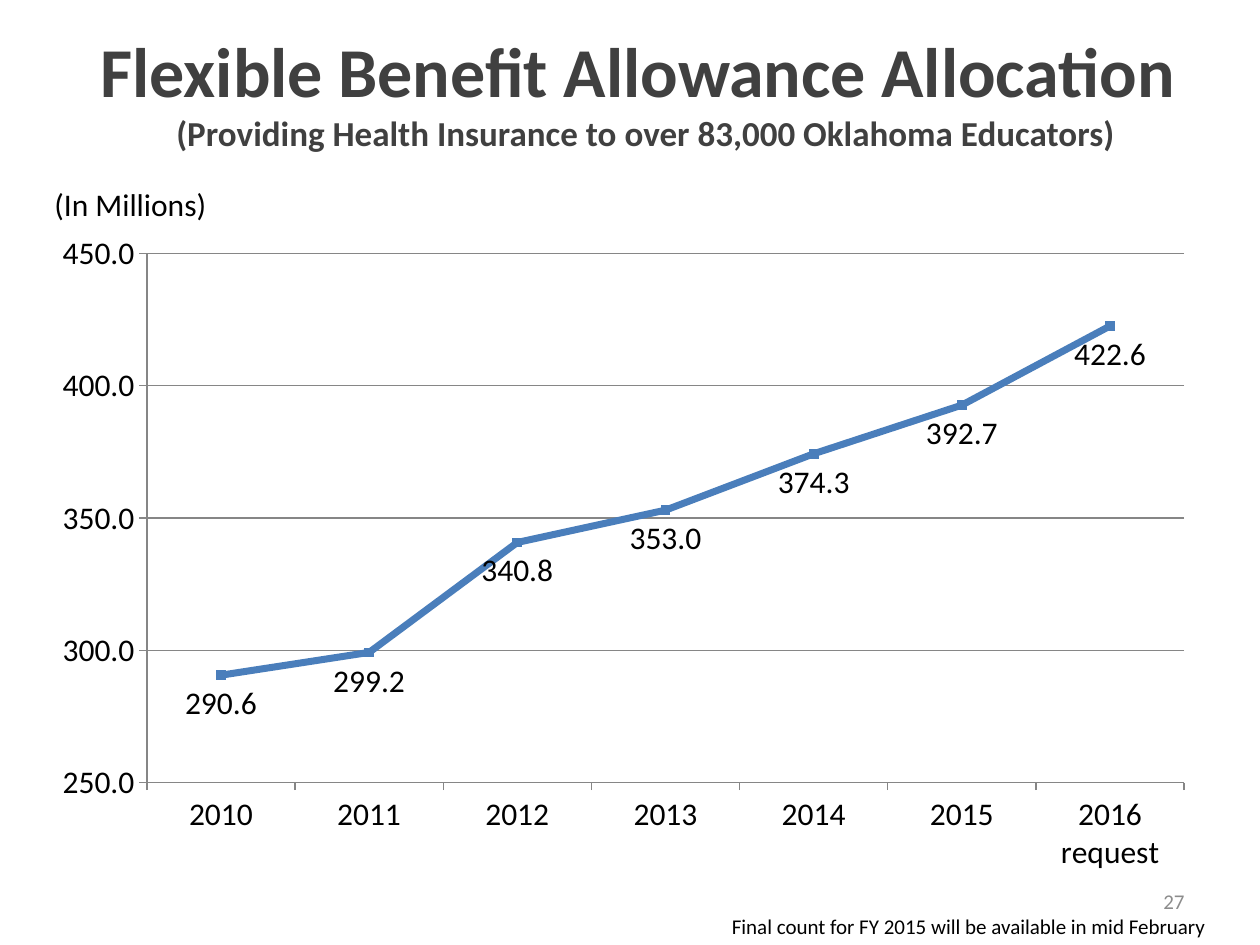
from dataclasses import dataclass

from lxml.etree import SubElement
from pptx import Presentation
from pptx.chart.data import CategoryChartData
from pptx.dml.color import RGBColor
from pptx.enum.chart import XL_CHART_TYPE, XL_LABEL_POSITION, XL_MARKER_STYLE, XL_TICK_MARK
from pptx.enum.text import MSO_ANCHOR, MSO_AUTO_SIZE, PP_ALIGN
from pptx.oxml.ns import qn
from pptx.util import Inches, Pt


@dataclass(frozen=True)
class Theme:
    """Colours, font and type sizes of the slide."""
    font: str = "Calibri"
    ink: str = "000000"
    heading: str = "404040"
    muted: str = "8C8C8C"
    axis: str = "868686"
    trend: str = "4A7EBB"
    marker: str = "4F81BD"
    title_size: int = 40
    subtitle_size: int = 20
    label_size: int = 18
    note_size: int = 12


def write(paragraph, text, *, theme, size, color, bold=False, align=PP_ALIGN.LEFT):
    """Put formatted text into a paragraph."""
    paragraph.alignment = align
    paragraph.space_before = Pt(0)
    run = paragraph.add_run()
    run.text = text
    run.font.name = theme.font
    run.font.size = Pt(size)
    run.font.bold = bold
    run.font.color.rgb = RGBColor.from_string(color)


class SlideBuilder:
    """Builds elements on a grid of 120 columns by 90 rows."""
    columns, rows = 120, 90

    def __init__(self, deck, theme):
        """Start a title-only slide."""
        self.deck, self.theme = deck, theme
        self.slide = deck.slides.add_slide(deck.slide_layouts[5])

    def area(self, column, row, width, height):
        """Convert grid cells to slide lengths."""
        across = self.deck.slide_width / self.columns
        down = self.deck.slide_height / self.rows
        return [round(n) for n in (column * across, row * down, width * across, height * down)]

    def title(self, cells, heading, subheading):
        """Fill the title placeholder with two lines."""
        title = self.slide.shapes.title
        title.left, title.top, title.width, title.height = self.area(*cells)
        frame = title.text_frame
        frame.word_wrap = True
        frame.auto_size = MSO_AUTO_SIZE.NONE
        frame.vertical_anchor = MSO_ANCHOR.TOP
        style = dict(theme=self.theme, color=self.theme.heading, bold=True, align=PP_ALIGN.CENTER)
        write(frame.paragraphs[0], heading, size=self.theme.title_size, **style)
        write(frame.add_paragraph(), subheading, size=self.theme.subtitle_size, **style)

    def label(self, cells, text, anchor=MSO_ANCHOR.TOP, wrap=True, **style):
        """Add a single-line text box."""
        frame = self.slide.shapes.add_textbox(*self.area(*cells)).text_frame
        frame.word_wrap = wrap
        frame.vertical_anchor = anchor
        write(frame.paragraphs[0], text, theme=self.theme, **style)

    def line_chart(self, cells, name, points, scale, number_format, plot):
        """Add a line chart with a value under each marker."""
        theme = self.theme
        allocations = CategoryChartData(number_format=number_format)
        allocations.categories = list(points)
        allocations.add_series(name, points.values())
        chart = self.slide.shapes.add_chart(
            XL_CHART_TYPE.LINE_MARKERS, *self.area(*cells), allocations).chart
        chart.has_legend = chart.has_title = False
        chart.font.name = theme.font
        chart.font.size = Pt(theme.label_size)
        chart.font.color.rgb = RGBColor.from_string(theme.ink)
        self.place_plot(chart, plot)

        years, amounts = chart.category_axis, chart.value_axis
        amounts.minimum_scale, amounts.maximum_scale, amounts.major_unit = scale
        amounts.has_major_gridlines = True
        amounts.tick_labels.number_format = number_format
        amounts.tick_labels.number_format_is_linked = False
        for axis in (years, amounts):
            axis.major_tick_mark = XL_TICK_MARK.OUTSIDE
            axis.minor_tick_mark = XL_TICK_MARK.NONE
        for rule in (years.format.line, amounts.format.line, amounts.major_gridlines.format.line):
            rule.color.rgb = RGBColor.from_string(theme.axis)
            rule.width = Pt(0.75)

        lines = chart.plots[0]
        lines.vary_by_categories = False
        trend = lines.series[0]
        trend.smooth = False
        trend.format.line.width = Pt(4)
        trend.format.line.color.rgb = RGBColor.from_string(theme.trend)
        trend.marker.style = XL_MARKER_STYLE.SQUARE
        trend.marker.size = 5
        trend.marker.format.fill.solid()
        trend.marker.format.fill.fore_color.rgb = RGBColor.from_string(theme.marker)
        trend.marker.format.line.color.rgb = RGBColor.from_string(theme.trend)
        values = trend.data_labels
        values.show_value = True
        values.position = XL_LABEL_POSITION.BELOW
        values.number_format = number_format
        values.number_format_is_linked = False

    @staticmethod
    def place_plot(chart, shares):
        """Fix the inner plot area as shares of the chart."""
        plot_area = chart.plots[0]._element.getparent()
        for old in plot_area.findall(qn("c:layout")):
            plot_area.remove(old)
        layout = SubElement(plot_area, qn("c:layout"))
        plot_area.insert(0, layout)
        manual = SubElement(layout, qn("c:manualLayout"))
        settings = dict(layoutTarget="inner", xMode="edge", yMode="edge", **shares)
        for tag, setting in settings.items():
            SubElement(manual, qn(f"c:{tag}")).set("val", str(setting))


def main():
    """Build and save the allowance slide."""
    theme = Theme()
    deck = Presentation()
    deck.slide_width, deck.slide_height = Inches(10), Inches(7.5)
    page = SlideBuilder(deck, theme)
    allocations = {
        "2010": 290.6, "2011": 299.2, "2012": 340.8, "2013": 353.0,
        "2014": 374.3, "2015": 392.7, "2016 request": 422.6,
    }
    page.label((86, 83.4, 28, 4.8), "27", anchor=MSO_ANCHOR.MIDDLE,
               size=theme.note_size, color=theme.muted, align=PP_ALIGN.RIGHT)
    page.label((34, 86.4, 82, 3.6), "Final count for FY 2015 will be available in mid February",
               size=theme.note_size, color=theme.ink, align=PP_ALIGN.RIGHT)
    page.title((7, 2, 109, 15), "Flexible Benefit Allowance Allocation ",
               "(Providing Health Insurance to over 83,000 Oklahoma Educators)")
    page.line_chart((4, 21, 111, 63), "Series 1", allocations, (250, 450, 50), "#,##0.0",
                    dict(x=0.09, y=0.05, w=0.89, h=0.8))
    page.label((4, 17, 18.2, 4.8), "(In Millions)", wrap=False,
               size=theme.label_size, color=theme.ink)
    deck.save("out.pptx")


if __name__ == "__main__":
    main()
